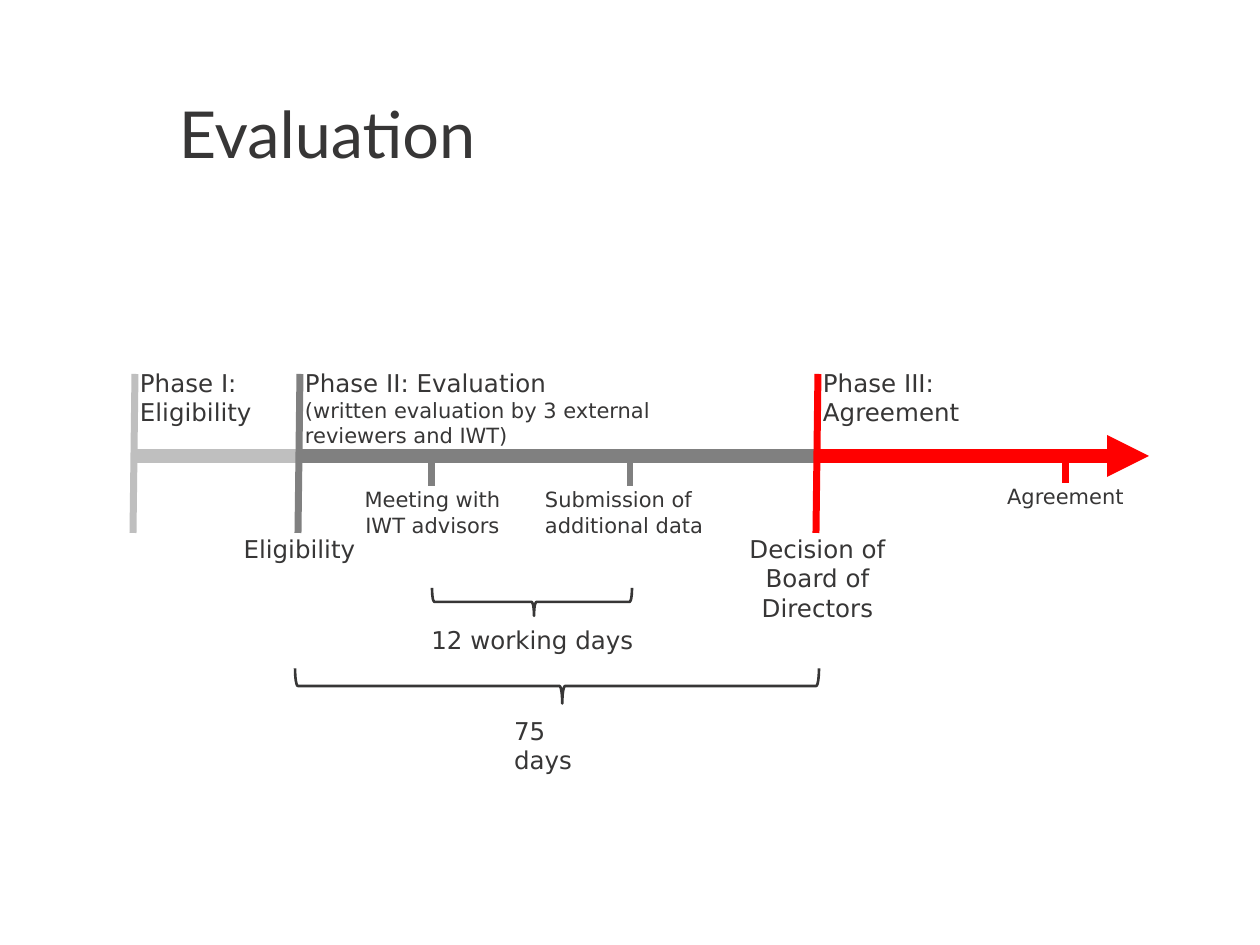
from lxml import etree
from pptx import Presentation
from pptx import util as u
from pptx.dml.color import RGBColor
from pptx.enum import shapes, text
from pptx.oxml import ns

PX = 914400 / 126
INK = RGBColor(0x37, 0x36, 0x36)
LIGHT = RGBColor(0xBF, 0xBF, 0xBF)
GREY = RGBColor(0x80, 0x80, 0x80)
RED = RGBColor(0xFF, 0x00, 0x00)
LEFT, CENTER = text.PP_ALIGN.LEFT, text.PP_ALIGN.CENTER
AXIS_Y = 456

presentation = Presentation()
presentation.slide_width = round(1260 * PX)
presentation.slide_height = round(945 * PX)
slide = presentation.slides.add_slide(presentation.slide_layouts[6])


def add_text(box, lines, align=LEFT, wrap=True, font="DejaVu Sans", inset=(13, 6), spacing=None):
    shape = slide.shapes.add_textbox(*[round(value * PX) for value in box])
    frame = shape.text_frame
    horizontal, vertical = [round(value * PX) for value in inset]
    frame_format = {
        "word_wrap": wrap,
        "vertical_anchor": text.MSO_ANCHOR.TOP,
        "margin_left": horizontal,
        "margin_right": horizontal,
        "margin_top": vertical,
        "margin_bottom": vertical,
    }
    for name, value in frame_format.items():
        setattr(frame, name, value)
    for index, (words, size) in enumerate(lines):
        paragraph = frame.add_paragraph() if index else frame.paragraphs[0]
        paragraph.alignment = align
        paragraph.line_spacing = spacing
        run = paragraph.add_run()
        run.text = words
        for name, value in {"name": font, "size": u.Pt(size)}.items():
            setattr(run.font, name, value)
        run.font.color.rgb = INK


def add_line(start, end, color, width, arrow=False):
    points = [round(value * PX) for value in (*start, *end)]
    connector = slide.shapes.add_connector(shapes.MSO_CONNECTOR.STRAIGHT, *points)
    connector.line.color.rgb = color
    connector.line.width = u.Pt(width)
    if arrow:
        outline = connector.line._get_or_add_ln()
        etree.SubElement(outline, ns.qn("a:tailEnd"), type="triangle")
    etree.SubElement(connector._element.spPr, ns.qn("a:effectLst"))


add_text((179, 105, 1022, 154), [("Evaluation", 37)], font="Lato", inset=(0, 0), spacing=u.Pt(38))

for start, end, color, arrow in [
    (131, 296, LIGHT, False),
    (299, 814, GREY, False),
    (815, 1149, RED, True),
]:
    add_line((start, AXIS_Y), (end, AXIS_Y), color, 8, arrow)

for x, color in [(133, LIGHT), (298, GREY), (816, RED)]:
    add_line((x, 533), (x + 2, 374), color, 4)

for x, bottom, color in [(432, 486, GREY), (630, 486, GREY), (1066, 483, RED)]:
    add_line((x, bottom), (x, bottom - 31), color, 4)

for box, lines, align, wrap in [
    ((127, 362, 199, 72), [("Phase I: Eligibility", 14)], LEFT, True),
    ((292, 362, 462, 93), [
        ("Phase II: Evaluation", 14),
        ("(written evaluation by 3 external reviewers and IWT)", 12),
    ], LEFT, True),
    ((810, 362, 192, 72), [("Phase III: Agreement", 14)], LEFT, True),
    ((227, 528, 145, 43), [("Eligibility", 14)], CENTER, True),
    ((697, 528, 241, 72), [("Decision of Board of Directors", 14)], CENTER, True),
    ((333, 481, 199, 64), [("Meeting with IWT advisors", 12)], CENTER, True),
    ((532, 481, 197, 64), [("Submission of additional data", 12)], LEFT, True),
    ((973, 478, 185, 38), [("Agreement", 12)], CENTER, True),
    ((418, 619, 229, 43), [("12 working days", 14)], CENTER, False),
    ((501, 710, 122, 43), [("75 days", 14)], LEFT, False),
]:
    add_text(box, lines, align, wrap)

for center_x, center_y, depth, span in [(532, 602, 28, 200), (557, 686, 35, 524)]:
    box = (center_x - depth / 2, center_y - span / 2, depth, span)
    brace = slide.shapes.add_shape(
        shapes.MSO_SHAPE.RIGHT_BRACE, *[round(value * PX) for value in box]
    )
    brace.rotation = 90
    brace.adjustments[0] = 0.08
    brace.adjustments[1] = 0.49
    brace.shadow.inherit = False
    brace.fill.background()
    brace.line.color.rgb = INK
    brace.line.width = u.Pt(1.5)

presentation.save("out.pptx")
